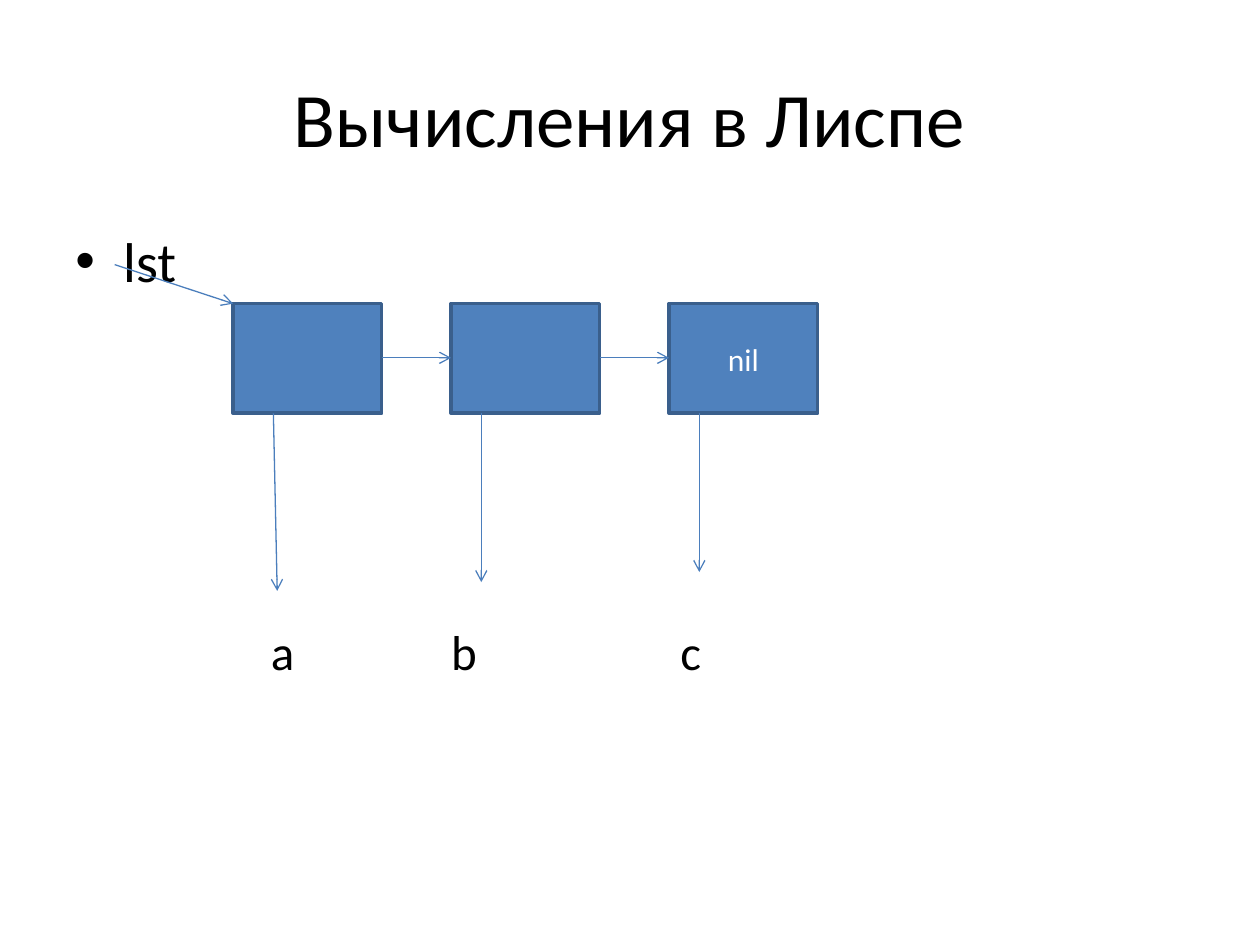
from pptx import Presentation
from pptx.dml.color import RGBColor
from pptx.enum.shapes import MSO_CONNECTOR, MSO_SHAPE
from pptx.enum.text import MSO_ANCHOR, PP_ALIGN
from pptx.oxml.ns import qn
from pptx.util import Inches, Pt
from lxml import etree

BLACK = RGBColor(0x00, 0x00, 0x00)
WHITE = RGBColor(0xFF, 0xFF, 0xFF)
BLUE = RGBColor(0x4F, 0x81, 0xBD)
EDGE = RGBColor(0x3A, 0x5F, 0x8C)
ARROW = RGBColor(0x4B, 0x7E, 0xBC)
RECT = MSO_SHAPE.RECTANGLE
LINE = MSO_CONNECTOR.STRAIGHT
MIDDLE = MSO_ANCHOR.MIDDLE
CENTER = PP_ALIGN.CENTER

prs = Presentation()
prs.slide_width = Inches(10)
prs.slide_height = Inches(7.5)
slide = prs.slides.add_slide(prs.slide_layouts[6])
shapes = slide.shapes


def write(shape, text, size, color=BLACK):
    frame = shape.text_frame
    frame.word_wrap = True
    frame.text = text
    para = frame.paragraphs[0]
    font = para.runs[0].font
    font.name = "Calibri"
    font.size = Pt(size)
    font.color.rgb = color
    return para


def arrow(x1, y1, x2, y2):
    line = shapes.add_connector(LINE, Inches(x1), Inches(y1), Inches(x2), Inches(y2))
    line.line.color.rgb = ARROW
    line.line.width = Pt(0.75)
    etree.SubElement(line.line._get_or_add_ln(), qn("a:tailEnd"), type="arrow")
    etree.SubElement(line._element.spPr, qn("a:effectLst"))


# Title
title = shapes.add_textbox(Inches(0.5), Inches(0.3), Inches(9), Inches(1.25))
write(title, "Вычисления в Лиспе", 44).alignment = CENTER
title.text_frame.vertical_anchor = MIDDLE

# Bullet with the list name
body = shapes.add_textbox(Inches(0.5), Inches(1.75), Inches(9), Inches(4.95))
props = write(body, "lst", 32)._p.get_or_add_pPr()
props.set("marL", str(Inches(0.38)))
props.set("indent", str(Inches(-0.38)))
etree.SubElement(props, qn("a:buFont"), typeface="Arial")
etree.SubElement(props, qn("a:buChar"), char="•")

# Values under the cells
for text, left in (("a", 2.15), ("b", 3.58), ("c", 5.4)):
    label = shapes.add_textbox(Inches(left), Inches(4.93), Inches(0.5), Inches(0.48))
    write(label, text, 28)
    frame = label.text_frame
    frame.margin_left = frame.margin_right = 0
    frame.margin_top = frame.margin_bottom = 0

# List cells
START, TOP, WIDTH, HEIGHT, STEP = 1.85, 2.41, 1.18, 0.87, 1.73
for i in range(3):
    cell = shapes.add_shape(RECT, Inches(START + i * STEP), Inches(TOP),
                            Inches(WIDTH), Inches(HEIGHT))
    cell.shadow.inherit = False
    cell.fill.solid()
    cell.fill.fore_color.rgb = BLUE
    cell.line.color.rgb = EDGE
    cell.line.width = Pt(2)

# The last cell ends the list
write(cell, "nil", 18, WHITE).alignment = CENTER
cell.text_frame.vertical_anchor = MIDDLE

# Arrows from cells to values
for x1, x2, end in ((2.17, 2.2, 4.69), (3.82, 3.82, 4.62), (5.55, 5.55, 4.54)):
    arrow(x1, TOP + HEIGHT, x2, end)

# Arrows between cells
for i in range(2):
    left = START + i * STEP
    arrow(left + WIDTH, 2.84, left + STEP, 2.84)

# Arrow from the name to the first cell
arrow(0.91, 2.1, START, TOP)

prs.save("out.pptx")
